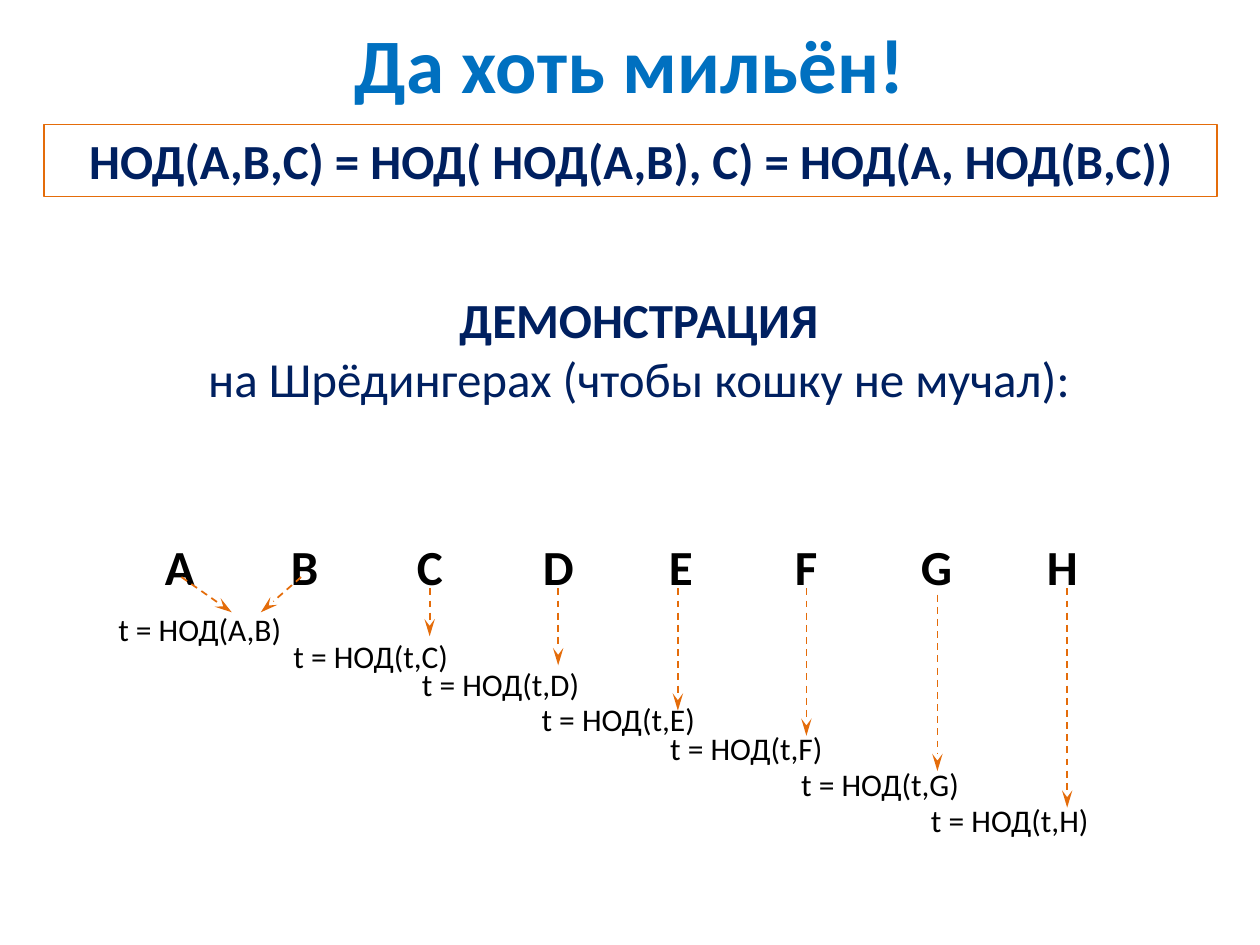
from dataclasses import dataclass

from lxml.etree import SubElement
from pptx import Presentation
from pptx.dml.color import RGBColor
from pptx.enum.dml import MSO_LINE
from pptx.enum.shapes import MSO_CONNECTOR, MSO_SHAPE
from pptx.enum.text import MSO_ANCHOR, MSO_AUTO_SIZE, PP_ALIGN
from pptx.oxml.ns import qn
from pptx.util import Inches, Pt

# The slide is a grid of 100 columns by 75 rows
COLUMNS, ROWS = 100, 75
WIDTH, HEIGHT = Inches(10), Inches(7.5)


@dataclass(frozen=True)
class Theme:
    font: str = "Calibri"
    title: RGBColor = RGBColor(0x00, 0x70, 0xC0)
    heading: RGBColor = RGBColor(0x00, 0x20, 0x60)
    body: RGBColor = RGBColor(0x00, 0x00, 0x00)
    accent: RGBColor = RGBColor(0xE4, 0x6C, 0x0A)
    title_size: int = 44
    heading_size: int = 28
    label_size: int = 18
    arrow_width: float = 1
    frame_width: float = 0.75


@dataclass(frozen=True)
class Box:
    column: float
    row: float
    columns: float
    rows: float

    def lengths(self) -> tuple:
        return (x(self.column), y(self.row), x(self.columns), y(self.rows))


@dataclass(frozen=True)
class Arrow:
    start: tuple
    end: tuple


@dataclass(frozen=True)
class Step:
    """One more number joins the running divisor t."""
    letter: str
    column: float
    arrow_top: float
    arrow_bottom: float
    label_row: float


THEME = Theme()
LETTERS = "ABCDEFGH"
LETTER_GAP = 10  # columns from one letter to the next
LABEL_COLUMNS, LABEL_ROWS = 15.9, 4
LABEL_OFFSET = 11.8  # columns from a label's left edge to its arrow

FIRST_ARROWS = [
    Arrow((14.4, 45.8), (18.4, 48.6)),
    Arrow((23.9, 45.8), (20.7, 48.6)),
]
STEPS = [
    Step("C", 34.1, 46.7, 50.5, 50.1),
    Step("D", 44.3, 46.7, 52.8, 52.3),
    Step("E", 53.8, 46.7, 56.4, 55.1),
    Step("F", 64.0, 46.7, 58.4, 57.4),
    Step("G", 74.4, 47.2, 61.2, 60.2),
    Step("H", 84.7, 46.7, 64.1, 63.1),
]


def x(columns: float) -> int:
    return round(WIDTH * columns / COLUMNS)


def y(rows: float) -> int:
    return round(HEIGHT * rows / ROWS)


def write(shape, lines: list, size: int, color: RGBColor, align=PP_ALIGN.LEFT,
          anchor=MSO_ANCHOR.TOP, auto_size=MSO_AUTO_SIZE.SHAPE_TO_FIT_TEXT) -> None:
    """Fill a shape with one paragraph of (text, bold) lines."""
    frame = shape.text_frame
    frame_format = {"word_wrap": True, "auto_size": auto_size, "vertical_anchor": anchor}
    for name, value in frame_format.items():
        setattr(frame, name, value)
    paragraph = frame.paragraphs[0]
    paragraph.alignment = align
    for index, (text, bold) in enumerate(lines):
        if index:
            paragraph.add_line_break()
        run = paragraph.add_run()
        run.text = text
        font_format = {"name": THEME.font, "size": Pt(size), "bold": bold}
        for name, value in font_format.items():
            setattr(run.font, name, value)
        run.font.color.rgb = color


def add_text(shapes, box: Box, lines: list, size: int, color: RGBColor, **layout):
    text_box = shapes.add_textbox(*box.lengths())
    write(text_box, lines, size, color, **layout)
    return text_box


def add_letters(shapes, box: Box) -> None:
    """Write the letters in one line, each on its own tab stop."""
    text_box = add_text(shapes, box, [("\t".join(LETTERS), True)],
                        THEME.heading_size, THEME.body)
    properties = text_box.text_frame.paragraphs[0]._p.get_or_add_pPr()
    tab_list = SubElement(properties, qn("a:tabLst"))
    for position in range(1, len(LETTERS)):
        SubElement(tab_list, qn("a:tab"), pos=str(x(position * LETTER_GAP)), algn="l")


def add_label(shapes, column: float, row: float, text: str) -> None:
    add_text(shapes, Box(column, row, LABEL_COLUMNS, LABEL_ROWS),
             [(text, False)], THEME.label_size, THEME.body)


def add_arrow(shapes, arrow: Arrow) -> None:
    connector = shapes.add_connector(
        MSO_CONNECTOR.STRAIGHT, x(arrow.start[0]), y(arrow.start[1]),
        x(arrow.end[0]), y(arrow.end[1]))
    connector.line.color.rgb = THEME.accent
    connector.line.width = Pt(THEME.arrow_width)
    connector.line.dash_style = MSO_LINE.DASH
    SubElement(connector.line._get_or_add_ln(), qn("a:tailEnd"), type="stealth", len="lg")
    SubElement(connector._element.spPr, qn("a:effectLst"))


def add_step(shapes, step: Step) -> None:
    group = shapes.add_group_shape().shapes
    add_label(group, step.column - LABEL_OFFSET, step.label_row, f"t = НОД(t,{step.letter})")
    add_arrow(group, Arrow((step.column, step.arrow_top), (step.column, step.arrow_bottom)))


def add_formula(shapes, box: Box, text: str) -> None:
    frame = shapes.add_shape(MSO_SHAPE.RECTANGLE, *box.lengths())
    frame.shadow.inherit = False
    frame.fill.background()
    frame.line.color.rgb = THEME.accent
    frame.line.width = Pt(THEME.frame_width)
    write(frame, [(text, True)], THEME.heading_size, THEME.heading, align=PP_ALIGN.CENTER)


def main() -> None:
    presentation = Presentation()
    presentation.slide_width, presentation.slide_height = WIDTH, HEIGHT
    shapes = presentation.slides.add_slide(presentation.slide_layouts[6]).shapes

    # Title
    add_text(shapes, Box(0, 0, COLUMNS, 10), [("Да хоть мильён!", True)],
             THEME.title_size, THEME.title, align=PP_ALIGN.CENTER,
             anchor=MSO_ANCHOR.MIDDLE, auto_size=MSO_AUTO_SIZE.NONE)

    # Row of numbers
    add_letters(shapes, Box(12.1, 42.1, 75, 5.7))

    # First pair, then one number at a time
    first_pair = shapes.add_group_shape().shapes
    for arrow in FIRST_ARROWS:
        add_arrow(first_pair, arrow)
    add_label(first_pair, 8.4, 47.9, "t = НОД(А,В)")
    for step in STEPS:
        add_step(shapes, step)

    # Formula and heading
    add_formula(shapes, Box(3.5, 9.9, 93.1, 5.7),
                "НОД(А,В,С) = НОД( НОД(А,В), С) = НОД(А, НОД(В,С))")
    add_text(shapes, Box(1.4, 22.5, 98.6, 10.4),
             [("ДЕМОНСТРАЦИЯ", True), ("на Шрёдингерах (чтобы кошку не мучал):", False)],
             THEME.heading_size, THEME.heading, align=PP_ALIGN.CENTER)

    presentation.save("out.pptx")


if __name__ == "__main__":
    main()
